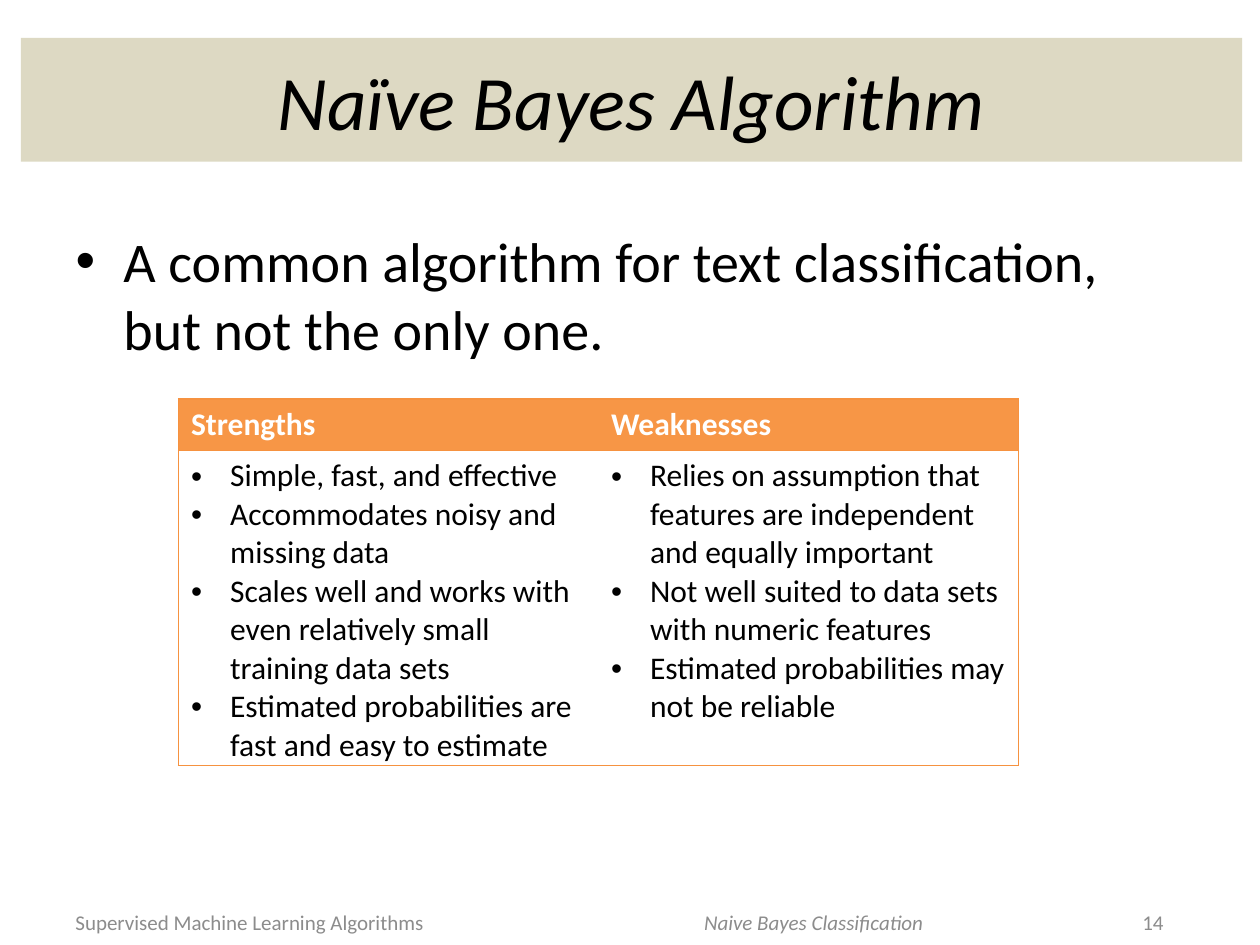
from dataclasses import dataclass
from lxml.etree import SubElement
from pptx import Presentation
from pptx.dml.color import RGBColor
from pptx.enum.text import MSO_ANCHOR, PP_ALIGN
from pptx.oxml import parse_xml
from pptx.oxml.ns import nsdecls, qn
from pptx.util import Inches, Pt


@dataclass(frozen=True)
class Theme:
    font: str = "Calibri"
    ink: str = "000000"
    pale: str = "FFFFFF"
    sand: str = "DDD9C3"
    gold: str = "F79646"
    edge: str = "F69240"
    gray: str = "8C8C8C"
    head: int = 44
    lead: int = 32
    cell: int = 18
    foot: int = 12
    rule: float = 0.75


class Deck:
    cols, rows = 120, 90

    def __init__(self, theme):
        self.theme = theme
        self.file = Presentation()
        self.file.slide_width = Inches(10)
        self.file.slide_height = Inches(7.5)
        self.slide = self.file.slides.add_slide(self.file.slide_layouts[1])

    def area(self, left, top, width, height):
        across = self.file.slide_width / self.cols
        down = self.file.slide_height / self.rows
        return [int(left * across), int(top * down), int(width * across), int(height * down)]

    def place(self, shape, box):
        shape.left, shape.top, shape.width, shape.height = self.area(*box)

    def label(self, frame, lines, size, color, bold=False, italic=False, align=PP_ALIGN.LEFT, indent=None):
        frame.text = "\n".join(lines)
        for para in frame.paragraphs:
            para.alignment = align
            para.space_before = Pt(0)
            if indent:
                self.bullet(para, indent)
            for run in para.runs:
                font = run.font
                font.name, font.size = self.theme.font, Pt(size)
                font.bold, font.italic = bold, italic
                font.color.rgb = RGBColor.from_string(color)

    def bullet(self, para, indent):
        props = para._p.get_or_add_pPr()
        props.set("marL", str(Inches(indent)))
        props.set("indent", str(-Inches(indent)))
        SubElement(props, qn("a:buFont")).set("typeface", "Arial")
        SubElement(props, qn("a:buChar")).set("char", "•")

    def title(self, text, box):
        shape = self.slide.shapes.title
        self.place(shape, box)
        shape.fill.solid()
        shape.fill.fore_color.rgb = RGBColor.from_string(self.theme.sand)
        shape.text_frame.vertical_anchor = MSO_ANCHOR.MIDDLE
        self.label(shape.text_frame, [text], self.theme.head, self.theme.ink, italic=True, align=PP_ALIGN.CENTER)

    def body(self, lines, box):
        shape = self.slide.placeholders[1]
        self.place(shape, box)
        self.label(shape.text_frame, lines, self.theme.lead, self.theme.ink, indent=0.38)

    def footer(self, text, box, align=PP_ALIGN.LEFT, italic=False):
        frame = self.slide.shapes.add_textbox(*self.area(*box)).text_frame
        frame.word_wrap = True
        frame.vertical_anchor = MSO_ANCHOR.MIDDLE
        self.label(frame, [text], self.theme.foot, self.theme.gray, italic=italic, align=align)

    def border(self, cell, sides):
        props = cell._tc.get_or_add_tcPr()
        for spot, side in enumerate("LRTB"):
            paint = "<a:noFill/>"
            if side in sides:
                paint = f'<a:solidFill><a:srgbClr val="{self.theme.edge}"/></a:solidFill>'
            line = f'<a:ln{side} {nsdecls("a")} w="{Pt(self.theme.rule)}">{paint}</a:ln{side}>'
            props.insert(spot, parse_xml(line))

    def table(self, lists, box, heights):
        look = self.theme
        grid = self.slide.shapes.add_table(2, len(lists), *self.area(*box)).table
        grid.horz_banding = False
        for row, height in zip(grid.rows, heights):
            row.height = Inches(height)
        for col, (head, points) in enumerate(lists.items()):
            side = "L" if col == 0 else "R"
            top, low = grid.cell(0, col), grid.cell(1, col)
            self.label(top.text_frame, [head], look.cell, look.pale, bold=True)
            self.label(low.text_frame, points, look.cell, look.ink, indent=0.31)
            top.fill.solid()
            top.fill.fore_color.rgb = RGBColor.from_string(look.gold)
            low.fill.background()
            for cell in (top, low):
                self.border(cell, side + "TB")


def main():
    deck = Deck(Theme())
    deck.title("Naïve Bayes Algorithm", (2, 3.6, 116.3, 11.8))
    deck.body(["A common algorithm for text classification, but not the only one."], (6, 21, 108, 59.4))
    deck.footer("Supervised Machine Learning Algorithms", (6, 86, 45, 3.7))
    deck.footer("Naive Bayes Classification", (53, 86, 49, 3.7), PP_ALIGN.CENTER, True)
    deck.footer("14", (106, 86, 6, 3.7), PP_ALIGN.RIGHT)
    deck.table({
        "Strengths": [
            "Simple, fast, and effective",
            "Accommodates noisy and missing data",
            "Scales well and works with even relatively small training data sets",
            "Estimated probabilities are fast and easy to estimate",
        ],
        "Weaknesses": [
            "Relies on assumption that features are independent and equally important",
            "Not well suited to data sets with numeric features",
            "Estimated probabilities may not be reliable",
        ],
    }, (17, 38, 80, 35), (0.41, 2.5))
    deck.file.save("out.pptx")


if __name__ == "__main__":
    main()
